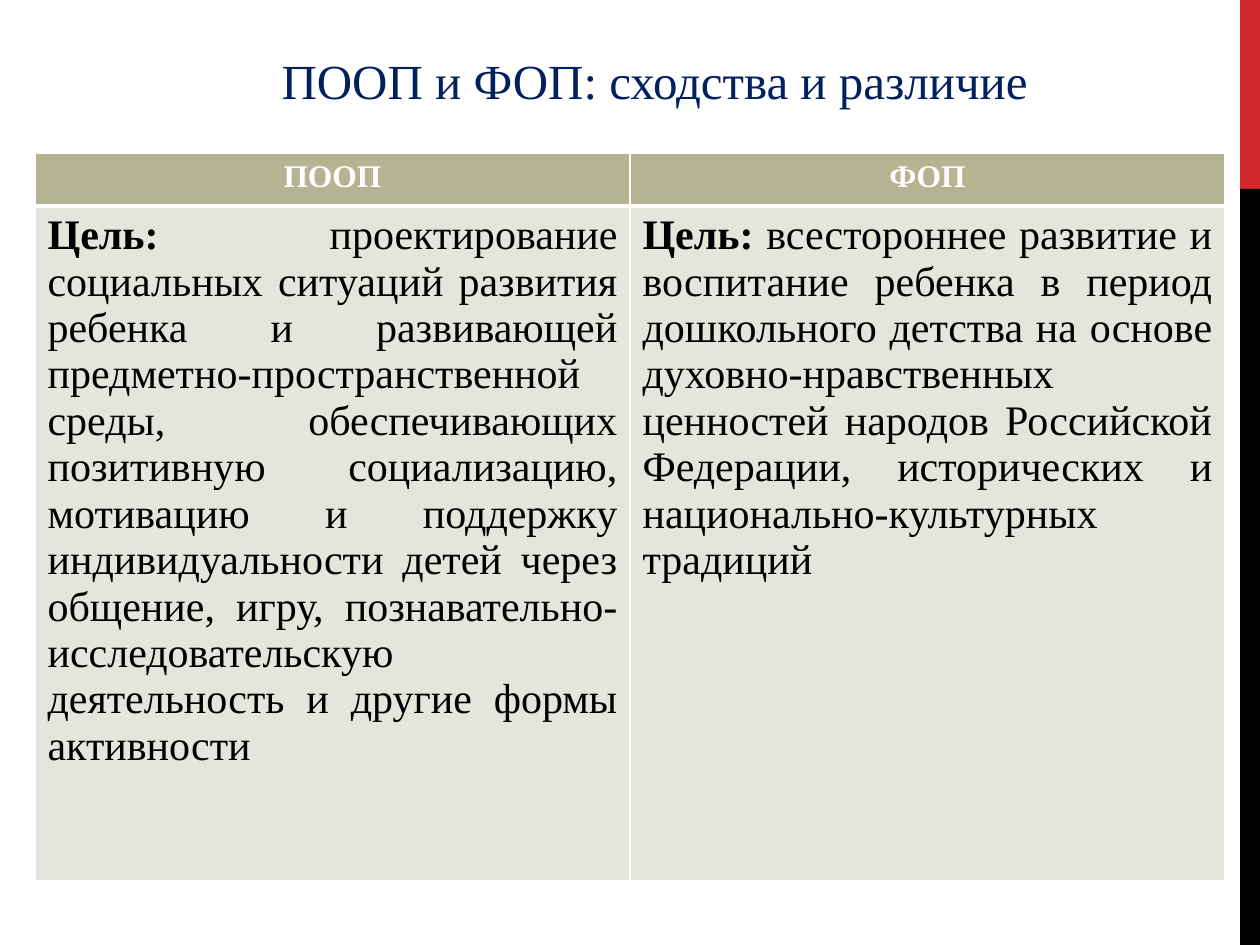
import pptx
import pptx.dml.color
import pptx.enum.shapes
import pptx.enum.text
import pptx.oxml
import pptx.oxml.ns
import pptx.util
from dataclasses import dataclass

EMU_PER_PX = 914400 / 126
ALIGN = pptx.enum.text.PP_ALIGN


def px(length):
    return pptx.util.Emu(round(length * EMU_PER_PX))


@dataclass(frozen=True)
class Theme:
    font: str = "Times New Roman"
    title_size: int = 28
    header_size: int = 18
    body_size: int = 24
    navy: str = "002060"
    red: str = "D1282E"
    black: str = "000000"
    white: str = "FFFFFF"
    header_fill: str = "B4B392"
    body_fill: str = "E5E5DC"


class SlideBuilder:
    def __init__(self, slide, theme):
        self.slide = slide
        self.theme = theme

    def paint(self, fill, color):
        fill.solid()
        fill.fore_color.rgb = pptx.dml.color.RGBColor.from_string(color)

    def bar(self, left, top, width, height, color):
        bar = self.slide.shapes.add_shape(
            pptx.enum.shapes.MSO_SHAPE.RECTANGLE,
            px(left), px(top), px(width), px(height))
        bar.shadow.inherit = False
        bar.line.fill.background()
        self.paint(bar.fill, color)

    def set_text(self, frame, parts, size, color, align):
        """Fill a frame with one paragraph of (text, bold) parts."""
        paragraph = frame.paragraphs[0]
        paragraph.alignment = align
        for text, bold in parts:
            run = paragraph.add_run()
            run.text = text
            run.font.name = self.theme.font
            run.font.size = pptx.util.Pt(size)
            run.font.bold = bold
            self.paint(run.font.fill, color)

    def title(self, left, top, width, height, text):
        title = self.slide.shapes.add_textbox(px(left), px(top), px(width), px(height))
        frame = title.text_frame
        frame.word_wrap = True
        frame.auto_size = pptx.enum.text.MSO_AUTO_SIZE.SHAPE_TO_FIT_TEXT
        self.set_text(frame, [(text, False)], self.theme.title_size,
                      self.theme.navy, ALIGN.CENTER)

    def borders(self, cell, **widths):
        """Draw the cell's L, R, T and B edges with the given point widths."""
        properties = cell._tc.get_or_add_tcPr()
        for index, (side, width) in enumerate(widths.items()):
            edge = pptx.oxml.parse_xml(
                f'<a:ln{side} {pptx.oxml.ns.nsdecls("a")} w="{pptx.util.Pt(width)}">'
                f'<a:solidFill><a:srgbClr val="{self.theme.white}"/></a:solidFill>'
                f'</a:ln{side}>')
            properties.insert(index, edge)

    def comparison(self, left, top, width, row_heights, columns):
        """Draw one column for each (heading, label, description)."""
        theme = self.theme
        table = self.slide.shapes.add_table(
            len(row_heights), len(columns),
            px(left), px(top), px(width), px(sum(row_heights))).table
        for row, height in zip(table.rows, row_heights):
            row.height = px(height)
        for index, (heading, label, description) in enumerate(columns):
            table.columns[index].width = px(width / len(columns))
            header, body = table.cell(0, index), table.cell(1, index)
            self.paint(header.fill, theme.header_fill)
            self.paint(body.fill, theme.body_fill)
            self.borders(header, L=1, R=1, T=1, B=3)
            self.borders(body, L=1, R=1, T=3, B=1)
            self.set_text(header.text_frame, [(heading, True)],
                          theme.header_size, theme.white, ALIGN.CENTER)
            self.set_text(body.text_frame, [(label, True), (description, False)],
                          theme.body_size, theme.black, ALIGN.JUSTIFY)


PROGRAMS = [
    ("ПООП", "Цель: ",
     "проектирование социальных ситуаций развития ребенка и развивающей "
     "предметно-пространственной среды, обеспечивающих позитивную социализацию, "
     "мотивацию и поддержку индивидуальности детей через общение, игру, "
     "познавательно-исследовательскую деятельность и другие формы активности"),
    ("ФОП", "Цель: ",
     "всестороннее развитие и воспитание ребенка в период дошкольного детства "
     "на основе духовно-нравственных ценностей народов Российской Федерации, "
     "исторических и национально-культурных традиций"),
]


def main():
    deck = pptx.Presentation()
    deck.slide_width, deck.slide_height = px(1260), px(945)
    theme = Theme()
    builder = SlideBuilder(deck.slides.add_slide(deck.slide_layouts[6]), theme)

    # Stripe along the right edge
    builder.bar(1240, 0, 20, 189, theme.red)
    builder.bar(1240, 189, 20, 756, theme.black)

    # Title
    builder.title(64, 44, 1181, 72, "ПООП и ФОП: сходства и различие")

    # Comparison of the two programs
    builder.comparison(35, 153, 1190, [53, 675], PROGRAMS)

    deck.save("out.pptx")


if __name__ == "__main__":
    main()
